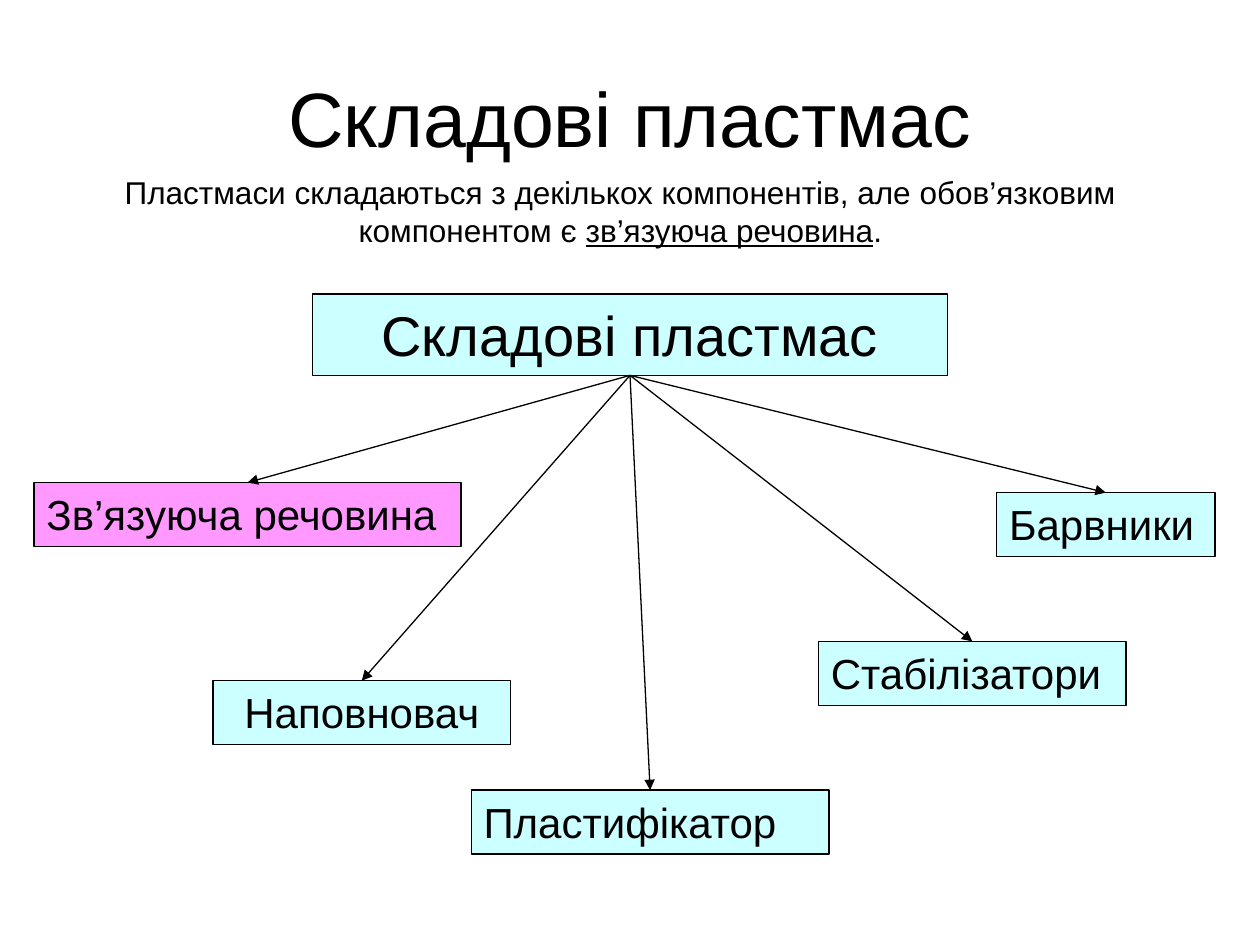
from lxml.etree import SubElement
from pptx import Presentation
from pptx.dml.color import RGBColor
from pptx.enum.shapes import MSO_CONNECTOR, MSO_SHAPE
from pptx.enum.text import MSO_ANCHOR, PP_ALIGN
from pptx.oxml.ns import qn
from pptx.util import Pt

BLACK = RGBColor(0x00, 0x00, 0x00)
CYAN = RGBColor(0xCC, 0xFF, 0xFF)
PINK = RGBColor(0xFF, 0x99, 0xFF)
FONT = "Arial"
TOP, BOTTOM = 0, 2
COMPONENT_HEIGHT = 36.5

TITLE = "Складові пластмас"
INTRODUCTION = [
    ("Пластмаси складаються з декількох компонентів, але обов’язковим компонентом є ", False),
    ("зв’язуюча речовина", True),
    (".", False),
]
COMPONENTS = [
    ("Зв’язуюча речовина", 19.5, 275.75, 244, PINK, PP_ALIGN.LEFT),
    ("Наповновач", 121.75, 389, 170, CYAN, PP_ALIGN.CENTER),
    ("Пластифікатор", 269.25, 451.5, 204.5, CYAN, PP_ALIGN.LEFT),
    ("Стабілізатори", 467.75, 366.5, 175.75, CYAN, PP_ALIGN.LEFT),
    ("Барвники", 569.5, 281.5, 124.75, CYAN, PP_ALIGN.LEFT),
]


def format_paragraph(paragraph, size, alignment):
    paragraph.alignment = alignment
    paragraph.font.name = FONT
    paragraph.font.size = Pt(size)
    paragraph.font.color.rgb = BLACK


def add_box(slide, text, left, top, width, height, fill, size, alignment):
    box = slide.shapes.add_shape(
        MSO_SHAPE.RECTANGLE, Pt(left), Pt(top), Pt(width), Pt(height))
    box.shadow.inherit = False
    box.fill.solid()
    box.fill.fore_color.rgb = fill
    box.line.color.rgb = BLACK
    box.line.width = Pt(0.75)
    frame = box.text_frame
    frame.word_wrap = True
    frame.vertical_anchor = MSO_ANCHOR.TOP
    frame.text = text
    format_paragraph(frame.paragraphs[0], size, alignment)
    return box


def add_arrow(slide, source, target):
    arrow = slide.shapes.add_connector(MSO_CONNECTOR.STRAIGHT, 0, 0, 0, 0)
    arrow.begin_connect(source, BOTTOM)
    arrow.end_connect(target, TOP)
    arrow.line.color.rgb = BLACK
    arrow.line.width = Pt(0.75)
    SubElement(arrow.line._get_or_add_ln(), qn("a:tailEnd"), type="triangle")
    SubElement(arrow._element.spPr, qn("a:effectLst"))


def main():
    presentation = Presentation()
    presentation.slide_width, presentation.slide_height = Pt(720), Pt(540)
    slide = presentation.slides.add_slide(presentation.slide_layouts[5])

    title = slide.shapes.title
    title.left, title.top, title.width, title.height = Pt(36), Pt(21.6), Pt(648), Pt(90)
    title.text_frame.text = TITLE
    title.text_frame.vertical_anchor = MSO_ANCHOR.MIDDLE
    format_paragraph(title.text_frame.paragraphs[0], 44, PP_ALIGN.CENTER)

    root = add_box(slide, TITLE, 178.5, 168, 363, 46.5, CYAN, 32, PP_ALIGN.CENTER)
    for text, left, top, width, fill, alignment in COMPONENTS:
        box = add_box(slide, text, left, top, width, COMPONENT_HEIGHT, fill, 24, alignment)
        add_arrow(slide, root, box)

    introduction = slide.shapes.add_textbox(Pt(14.25), Pt(95.25), Pt(680.5), Pt(50.5))
    frame = introduction.text_frame
    frame.word_wrap = True
    frame.vertical_anchor = MSO_ANCHOR.MIDDLE
    paragraph = frame.paragraphs[0]
    format_paragraph(paragraph, 18, PP_ALIGN.CENTER)
    for text, underlined in INTRODUCTION:
        run = paragraph.add_run()
        run.text = text
        if underlined:
            run.font.underline = True

    presentation.save("out.pptx")


if __name__ == "__main__":
    main()
